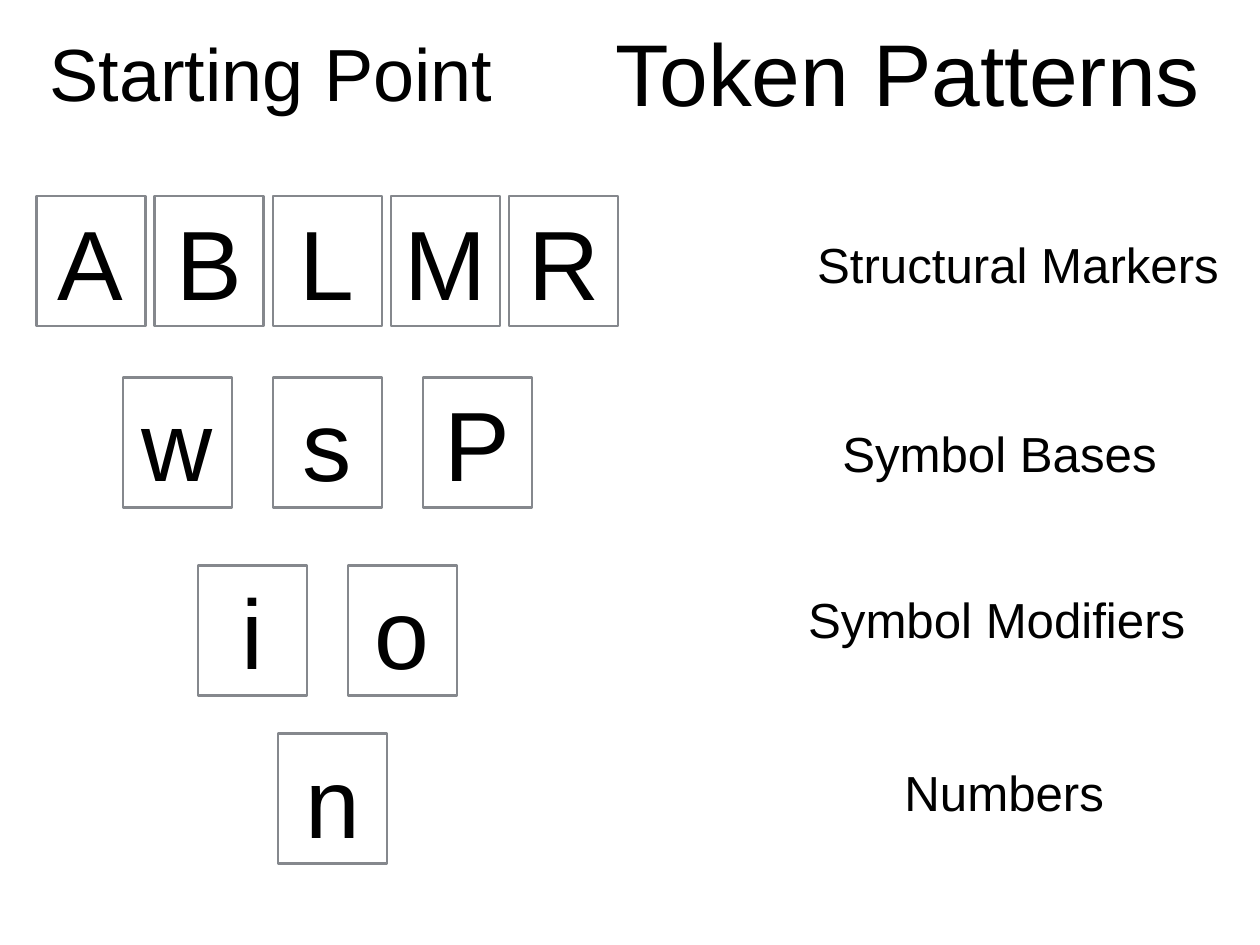
from pptx import Presentation
from pptx.dml.color import RGBColor
from pptx.enum.shapes import MSO_SHAPE
from pptx.enum.text import MSO_ANCHOR, PP_ALIGN
from pptx.util import Pt

RECTANGLE = MSO_SHAPE.RECTANGLE
MIDDLE = MSO_ANCHOR.MIDDLE
LEFT, CENTER = PP_ALIGN.LEFT, PP_ALIGN.CENTER
BLACK = RGBColor(0x00, 0x00, 0x00)
GRAY = RGBColor(0x85, 0x88, 0x8D)
FONT = "Arial"

# text, left, width, size, alignment
HEADINGS = [
    ("Starting Point", 40.3, 414, 60, LEFT),
    ("Token Patterns", 480.2, 514.8, 71.2, CENTER),
]
# letters, row center, tile pitch, tile top, label, label center, label top, label width
ROWS = [
    ("ABLMR", 266, 96.1, 159.1, "Structural Markers", 827.3, 186.5, 335.5),
    ("wsP", 266, 121.9, 306.7, "Symbol Bases", 812.2, 339.8, 265),
    ("io", 266, 121.9, 459.4, "Symbol Modifiers", 810, 475.2, 318.2),
    ("n", 270.4, 0, 596.2, "Numbers", 816.1, 615.6, 173.5),
]
HEADING_TOP, HEADING_HEIGHT = 7.9, 100.8
TILE_WIDTH, TILE_HEIGHT, TILE_SIZE = 88.6, 105.8, 80
LABEL_HEIGHT, LABEL_SIZE, LABEL_INSET = 56.2, 40, 4


def write(shape, text, size, alignment=CENTER, inset=0, wrap=True):
    frame = shape.text_frame
    frame.word_wrap = wrap
    frame.vertical_anchor = MIDDLE
    frame.margin_left = frame.margin_right = Pt(inset)
    frame.margin_top = frame.margin_bottom = Pt(inset)
    paragraph = frame.paragraphs[0]
    paragraph.alignment = alignment
    run = paragraph.add_run()
    run.text = text
    run.font.name = FONT
    run.font.size = Pt(size)
    run.font.color.rgb = BLACK


def add_tile(slide, letter, left, top):
    tile = slide.shapes.add_shape(
        RECTANGLE, Pt(left), Pt(top), Pt(TILE_WIDTH), Pt(TILE_HEIGHT))
    tile.shadow.inherit = False
    tile.fill.background()
    tile.line.color.rgb = GRAY
    tile.line.width = Pt(2)
    write(tile, letter, TILE_SIZE)


def main():
    presentation = Presentation()
    presentation.slide_width = Pt(1024)
    presentation.slide_height = Pt(768)
    slide = presentation.slides.add_slide(presentation.slide_layouts[6])

    for text, left, width, size, alignment in HEADINGS:
        heading = slide.shapes.add_textbox(
            Pt(left), Pt(HEADING_TOP), Pt(width), Pt(HEADING_HEIGHT))
        write(heading, text, size, alignment)

    for letters, center, pitch, top, text, label_center, label_top, width in ROWS:
        first_left = center - (pitch * (len(letters) - 1) + TILE_WIDTH) / 2
        for index, letter in enumerate(letters):
            add_tile(slide, letter, first_left + index * pitch, top)
        label = slide.shapes.add_textbox(
            Pt(label_center - width / 2), Pt(label_top), Pt(width), Pt(LABEL_HEIGHT))
        write(label, text, LABEL_SIZE, inset=LABEL_INSET, wrap=False)

    presentation.save("out.pptx")


if __name__ == "__main__":
    main()
